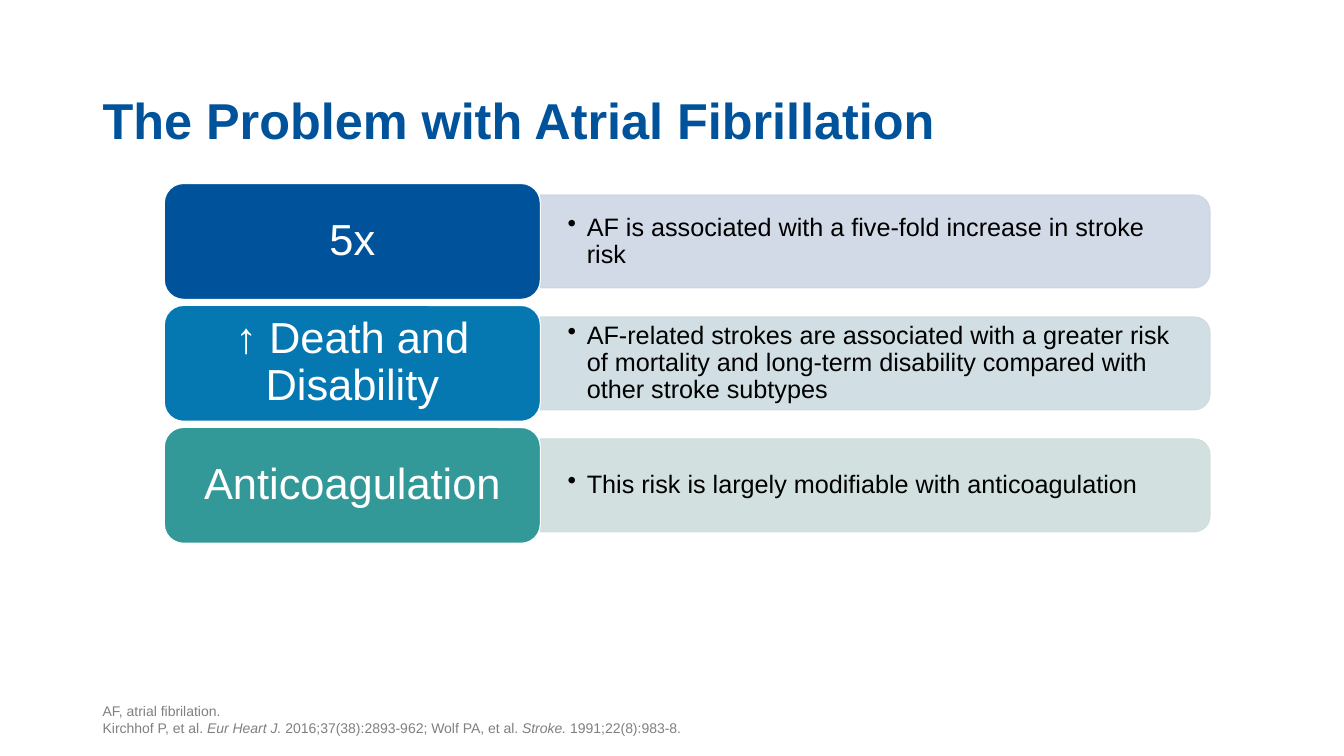
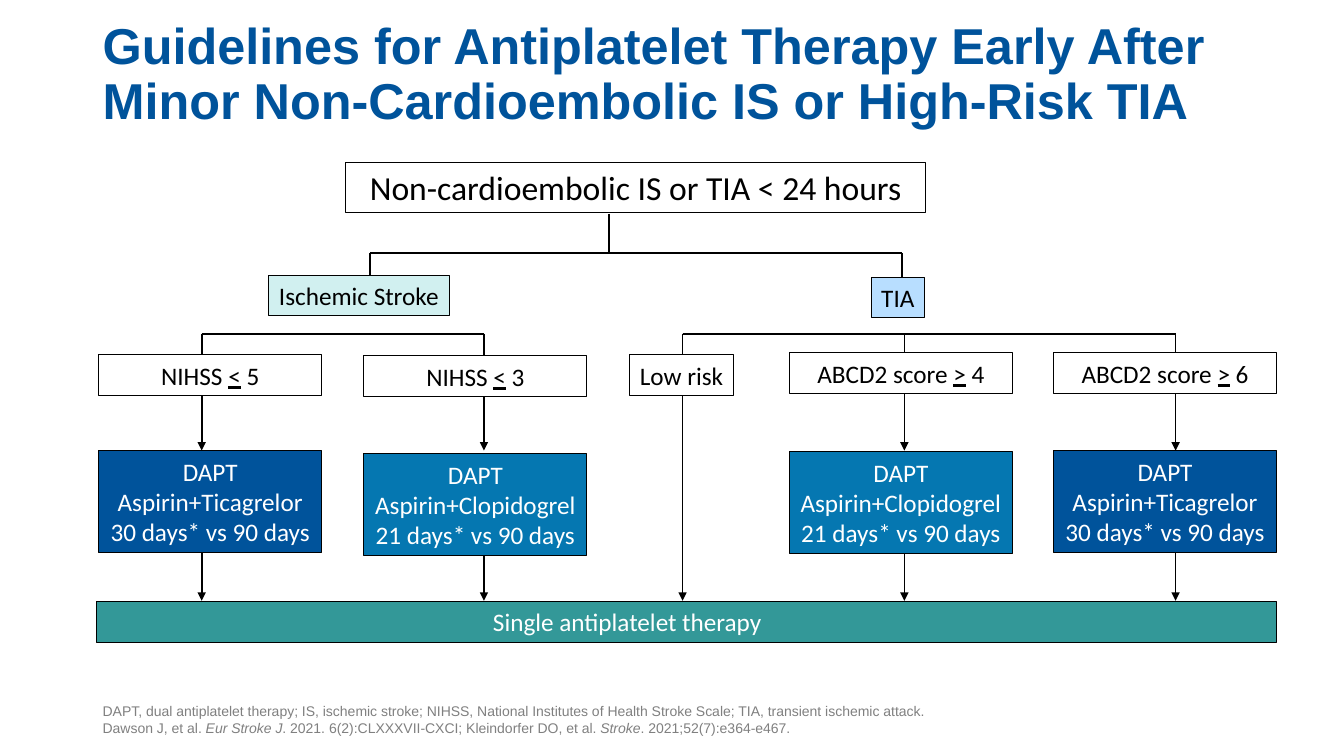
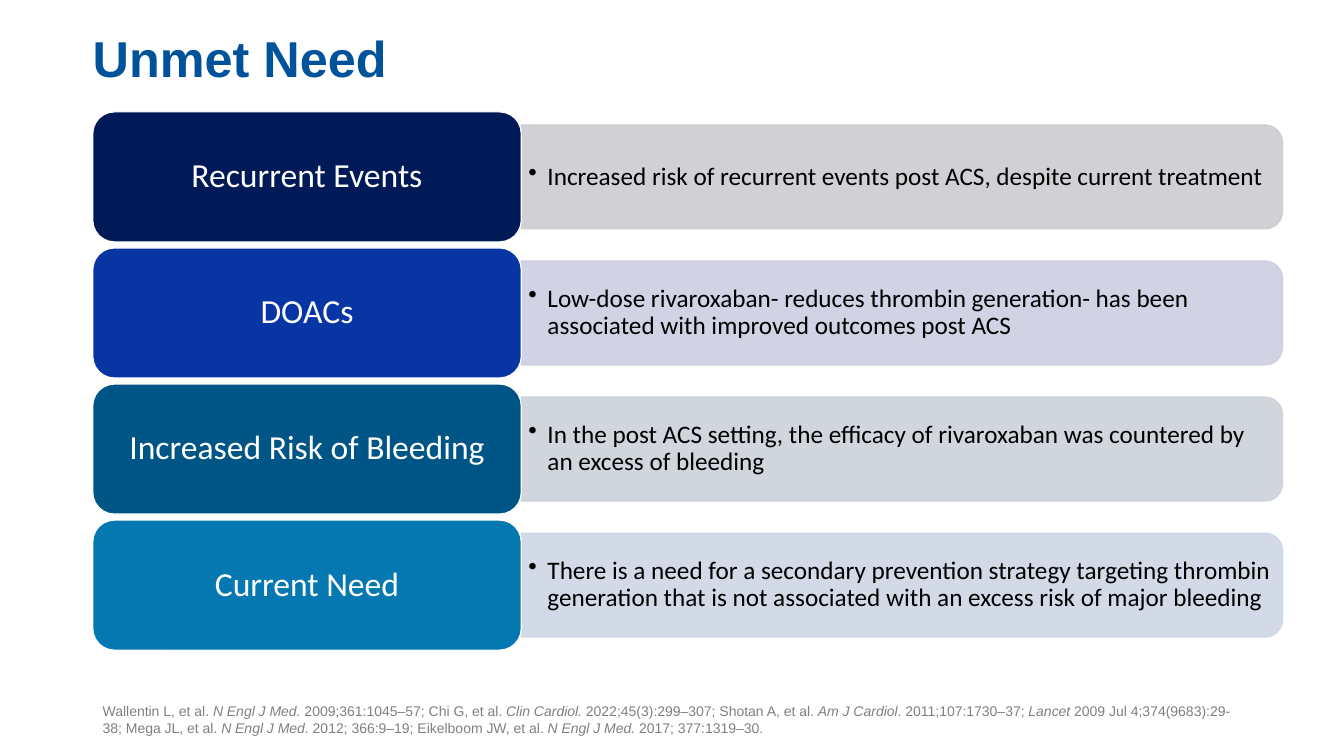
from lxml import etree
from pptx import Presentation
from pptx import util as u
from pptx.dml.color import RGBColor
from pptx.enum import shapes, text
from pptx.oxml.ns import qn

BLUE, SKY, TEAL = "00539B", "0577B1", "339898"
BLACK, WHITE, GREY = "000000", "FFFFFF", "808080"
TOP, MIDDLE, BOTTOM = text.MSO_ANCHOR.TOP, text.MSO_ANCHOR.MIDDLE, text.MSO_ANCHOR.BOTTOM
LEFT, CENTER = text.PP_ALIGN.LEFT, text.PP_ALIGN.CENTER
TICAGRELOR = ["DAPT", "Aspirin+Ticagrelor", "30 days* vs 90 days"]
CLOPIDOGREL = ["DAPT", "Aspirin+Clopidogrel", "21 days* vs 90 days"]


def color(value):
    """Turn a hex string into a colour."""
    return RGBColor.from_string(value)


def inches(*lengths):
    """Turn numbers into lengths in inches."""
    return [u.Inches(length) for length in lengths]


def write(shape, lines, size, ink, font="Arial", align=LEFT, anchor=MIDDLE, margins=(0.1, 0.05),
          spacing=None, bold=None, bullet=False, emphasis="italic", wrap=True):
    """Fill a shape with paragraphs; text between underscores gets the emphasis."""
    frame = shape.text_frame
    frame.word_wrap, frame.vertical_anchor = wrap, anchor
    frame.margin_left = frame.margin_right = u.Inches(margins[0])
    frame.margin_top = frame.margin_bottom = u.Inches(margins[1])
    for index, line in enumerate(lines):
        paragraph = frame.add_paragraph() if index else frame.paragraphs[0]
        if bullet:
            properties = paragraph._p.get_or_add_pPr()
            properties.set("marL", str(u.Inches(0.19)))
            properties.set("indent", str(u.Inches(-0.19)))
            etree.SubElement(properties, qn("a:buChar")).set("char", "•")
        paragraph.alignment = align
        if spacing:
            paragraph.line_spacing = spacing
        paragraph.font.name, paragraph.font.size = font, u.Pt(size)
        paragraph.font.bold, paragraph.font.color.rgb = bold, color(ink)
        for position, part in enumerate(line.split("_")):
            if part:
                run = paragraph.add_run()
                run.text = part
                if position % 2:
                    setattr(run.font, emphasis, True)


def add_text(slide, box, lines, size, ink, **style):
    """Add a text box."""
    write(slide.shapes.add_textbox(*inches(*box)), lines, size, ink, **style)


def add_block(slide, kind, box, fill, line, width):
    """Add a filled and outlined shape without shadow."""
    shape = slide.shapes.add_shape(kind, *inches(*box))
    shape.shadow.inherit = False
    shape.fill.solid()
    shape.fill.fore_color.rgb = color(fill)
    shape.line.color.rgb = color(line)
    shape.line.width = u.Pt(width)
    return shape


def add_line(slide, start, end, arrow=False):
    """Add a straight black line, with an arrowhead on request."""
    line = slide.shapes.add_connector(shapes.MSO_CONNECTOR.STRAIGHT, *inches(*start, *end))
    line.line.color.rgb = color(BLACK)
    line.line.width = u.Pt(1.25)
    if arrow:
        etree.SubElement(line.line._get_or_add_ln(), qn("a:tailEnd")).set("type", "triangle")
    etree.SubElement(line._element.spPr, qn("a:effectLst"))


def add_slide(presentation, title, footnotes, top, anchor=BOTTOM, margins=(0.1, 0.05)):
    """Add a blank slide with its title and footnotes."""
    slide = presentation.slides.add_slide(presentation.slide_layouts[6])
    add_text(slide, (0.92, top, 11.5, 1.21), [title], 36, BLUE,
             anchor=anchor, margins=margins, spacing=0.9, bold=True)
    add_text(slide, (0.92, 6.95, 11.5, 0.4), footnotes, 10, GREY, anchor=BOTTOM)
    return slide


def add_rows(slide, rows, left, top, label_size, panel_width, pitch, label_style, panel_style):
    """Stack rows of a coloured label with a pale bullet panel beside it."""
    label_width, label_height = label_size
    panel_left, panel_height = left + label_width, label_height * 0.8
    for index, (label, fill, bullet, tint) in enumerate(rows):
        row_top = top + index * pitch
        middle = row_top + label_height / 2
        upright = (panel_left + (panel_width - panel_height) / 2, middle - panel_width / 2,
                   panel_height, panel_width)
        panel = add_block(slide, shapes.MSO_SHAPE.ROUND_2_SAME_RECTANGLE, upright, tint, tint, 0.85)
        panel.rotation = 90
        for tone in panel._element.spPr.iter(qn("a:srgbClr")):
            etree.SubElement(tone, qn("a:alpha")).set("val", "90000")
        add_text(slide, (panel_left, middle - panel_height / 2, panel_width - 0.05, panel_height),
                 [bullet], 18, BLACK, spacing=0.9, bullet=True, **panel_style)
        box = (left, row_top, label_width, label_height)
        shape = add_block(slide, shapes.MSO_SHAPE.ROUNDED_RECTANGLE, box, fill, WHITE, 0.85)
        write(shape, [label], ink=WHITE, align=CENTER, spacing=0.9, **label_style)


def add_box(slide, box, lines, fill=WHITE, ink=BLACK, size=18, wrap=False):
    """Add a flowchart box."""
    shape = add_block(slide, shapes.MSO_SHAPE.RECTANGLE, box, fill, BLACK, 0.75)
    write(shape, lines, size, ink, font="Calibri", align=CENTER, emphasis="underline", wrap=wrap)
    return shape


def add_column(slide, x, left, width, top, score, fill=None, treatment=None, treatment_top=None):
    """Add one flowchart branch from its score down to the final bar."""
    add_line(slide, (x, 3.31), (x, 3.56))
    if treatment:
        add_line(slide, (x, 3.79), (x, 4.47), arrow=True)
    add_line(slide, (x, 5.29 if treatment else 3.79), (x, 5.96), arrow=True)
    add_box(slide, (left, top, width, 0.4), [score])
    if treatment:
        add_box(slide, (left, treatment_top, width, 1.01), treatment, fill, WHITE)


def build_problem(presentation):
    """Build the slide on atrial fibrillation."""
    slide = add_slide(presentation, "The Problem with Atrial Fibrillation", [
        "AF, atrial fibrilation.",
        "Kirchhof P, et al. _Eur Heart J._ 2016;37(38):2893-962; Wolf PA, et al._ Stroke. _"
        "1991;22(8):983-8."], 0.33)
    rows = [
        ("5x", BLUE, "AF is associated with a five-fold increase in stroke risk", "CCD6E4"),
        ("↑ Death and Disability", SKY, "AF-related strokes are associated with a greater risk of "
         "mortality and long-term disability compared with other stroke subtypes", "CDDBE1"),
        ("Anticoagulation", TEAL, "This risk is largely modifiable with anticoagulation", "CEDDDD"),
    ]
    add_rows(slide, rows, 1.63, 1.82, (3.73, 1.15), 6.64, 1.21,
             {"size": 31, "margins": (0.19, 0.12)}, {"margins": (0.27, 0.14)})


def build_guidelines(presentation):
    """Build the antiplatelet therapy flowchart."""
    slide = add_slide(
        presentation,
        "Guidelines for Antiplatelet Therapy Early After Minor Non-Cardioembolic IS or High-Risk TIA",
        ["DAPT, dual antiplatelet therapy; IS, ischemic stroke; NIHSS, National Institutes of Health "
         "Stroke Scale; TIA, transient ischemic attack.",
         "Dawson J, et al. _Eur Stroke J_. 2021. 6(2):CLXXXVII-CXCI; Kleindorfer DO, et al. "
         "_Stroke_. 2021;52(7):e364-e467."], 0.13)
    add_line(slide, (6.04, 2.12), (6.04, 2.51))
    for start, end, y in [(3.67, 8.95, 2.51), (2, 4.8, 3.31), (6.77, 11.66, 3.31)]:
        add_line(slide, (start, y), (end, y))
    for x in (3.67, 8.95):
        add_line(slide, (x, 2.51), (x, 2.79))
    add_box(slide, (3.43, 1.61, 5.75, 0.5), ["Non-cardioembolic IS or TIA < 24 hours"],
            size=24, wrap=True)
    add_box(slide, (2.66, 2.73, 1.8, 0.4), ["Ischemic Stroke"], "D1F0F0")
    add_box(slide, (8.64, 2.75, 0.53, 0.4), ["TIA"], "B8DEFF")
    columns = [
        (2, 0.98, 2.21, 3.52, "NIHSS _<_ 5", BLUE, TICAGRELOR, 4.47),
        (4.8, 3.61, 2.21, 3.53, "NIHSS _<_ 3", SKY, CLOPIDOGREL, 4.5),
        (6.77, 6.24, 1.04, 3.52, "Low risk"),
        (8.97, 7.83, 2.21, 3.5, "ABCD2 score _>_ 4", SKY, CLOPIDOGREL, 4.48),
        (11.66, 10.45, 2.21, 3.5, "ABCD2 score _>_ 6", BLUE, TICAGRELOR, 4.47),
    ]
    for column in columns:
        add_column(slide, *column)
    bar = add_box(slide, (0.96, 5.97, 11.7, 0.4), ["Single antiplatelet therapy"], TEAL, WHITE,
                  wrap=True)
    bar.text_frame.paragraphs[0].alignment = LEFT
    bar.text_frame.margin_left = u.Inches(3.93)


def build_unmet_need(presentation):
    """Build the slide on unmet need."""
    slide = add_slide(presentation, "Unmet Need", [
        "Wallentin L, et al. _N Engl J Med._ 2009;361:1045–57; Chi G, et al. _Clin Cardiol._ "
        "2022;45(3):299–307; Shotan A, et al. _Am J Cardiol_. 2011;107:1730–37; _Lancet_ 2009 Jul "
        "4;374(9683):29-38; Mega JL, et al. _N Engl J Med_. 2012; 366:9–19; Eikelboom JW, et al. "
        "_N Engl J Med._ 2017; 377:1319–30."], 0, MIDDLE, (0, 0))
    rows = [
        ("Recurrent Events", "001A57",
         "Increased risk of recurrent events post ACS, despite current treatment", "CCCDD1"),
        ("DOACs", "0736A4", "Low-dose rivaroxaban- reduces thrombin generation- has been associated "
         "with improved outcomes post ACS", "CCCEE0"),
        ("Increased Risk of Bleeding", "005587", "In the post ACS setting, the efficacy of "
         "rivaroxaban was countered by an excess of bleeding", "CCD1D9"),
        ("Current Need", SKY, "There is a need for a secondary prevention strategy targeting thrombin "
         "generation that is not associated with an excess risk of major bleeding", "CCD6E4"),
    ]
    add_rows(slide, rows, 0.92, 1.11, (4.25, 1.29), 7.55, 1.35,
             {"size": 24, "font": "Calibri", "margins": (0.16, 0.11)},
             {"font": "Calibri", "margins": (0.07, 0.04)})


def main():
    """Build and save the presentation."""
    presentation = Presentation()
    presentation.slide_width, presentation.slide_height = inches(13.33, 7.5)
    build_problem(presentation)
    build_guidelines(presentation)
    build_unmet_need(presentation)
    presentation.save("out.pptx")


if __name__ == "__main__":
    main()
